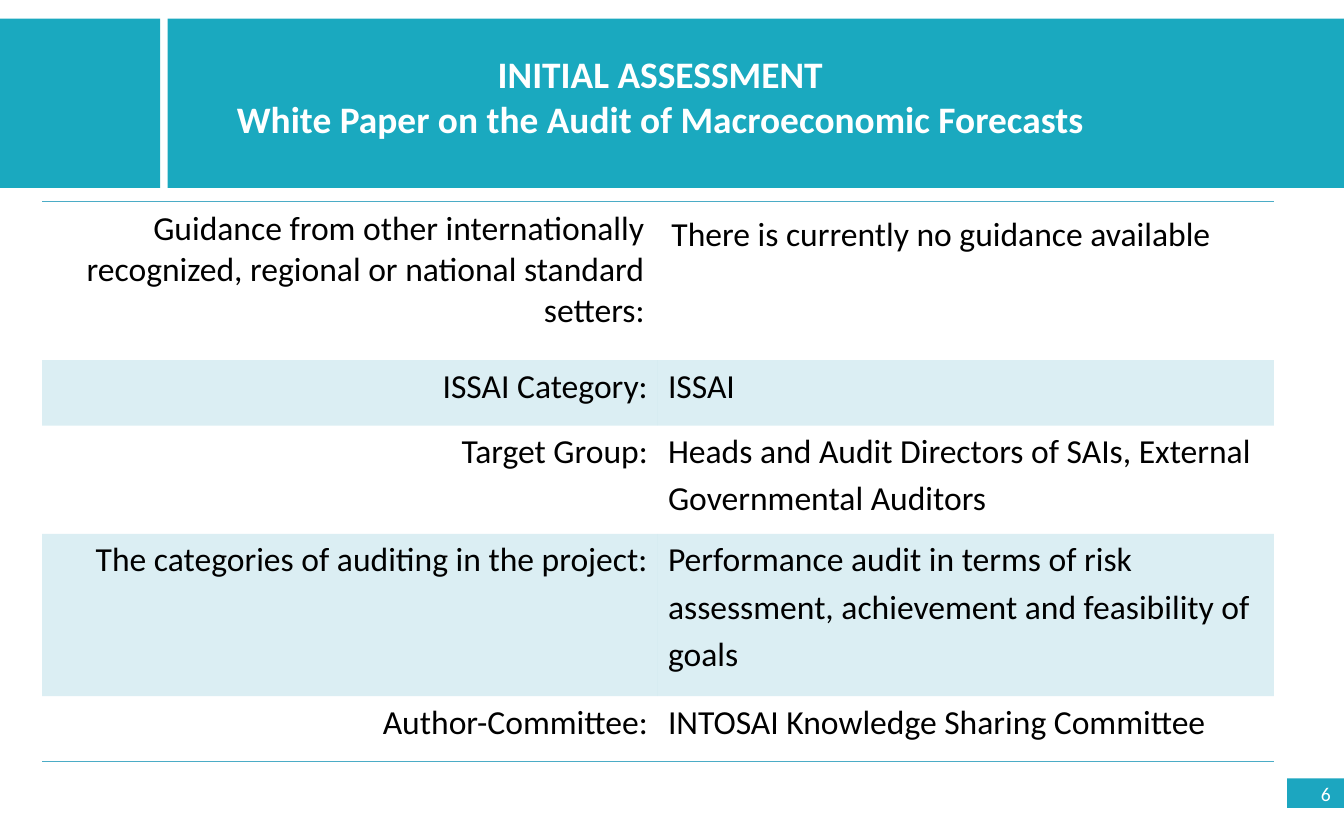
from lxml.etree import SubElement
from pptx import Presentation
from pptx.dml.color import RGBColor
from pptx.enum.shapes import MSO_SHAPE as Shape
from pptx.enum.text import MSO_ANCHOR as Anchor, MSO_AUTO_SIZE as AutoSize, PP_ALIGN as Align
from pptx.oxml.ns import qn
from pptx.util import Pt

TEAL = RGBColor(0x1A, 0xA9, 0xBF)
BADGE_TEAL = RGBColor(0x1C, 0xA6, 0xC0)
ACCENT = RGBColor(0x4B, 0xAC, 0xC6)
WHITE = RGBColor(0xFF, 0xFF, 0xFF)
BLACK = RGBColor(0, 0, 0)
FONT = "Calibri"
PLAIN_STYLE = "{2D5ABB26-0587-4C30-8999-92F81FD0307C}"

TITLE = ["INITIAL ASSESSMENT", "White Paper on the Audit of Macroeconomic Forecasts"]
PAGE_NUMBER = "6"
# (label, answer, row height)
ROWS = [
    ("Guidance from other internationally recognized, regional or national standard setters:",
     "There is currently no guidance available", 85),
    ("ISSAI Category:", "ISSAI", 35),
    ("Target Group:", "Heads and Audit Directors of SAIs, External Governmental Auditors", 58),
    ("The categories of auditing in the project:",
     "Performance audit in terms of risk assessment, achievement and feasibility of goals", 87),
    ("Author-Committee:", "INTOSAI Knowledge Sharing Committee", 35),
]
COLUMN_WIDTH = 330
BANDS = [(0, 85.9), (89.8, 630.2)]  # left, width


def write(frame, lines, size=18, color=BLACK, bold=False, align=Align.LEFT, spacing=None):
    for index, line in enumerate(lines):
        para = frame.paragraphs[0] if index == 0 else frame.add_paragraph()
        para.alignment = align
        if spacing:
            para.line_spacing = spacing
        span = para.add_run()
        span.text = line
        font = span.font
        font.name, font.size, font.bold = FONT, Pt(size), bold
        font.color.rgb = color


def add_block(page, left, top, width, height, color):
    block = page.shapes.add_shape(Shape.RECTANGLE, Pt(left), Pt(top), Pt(width), Pt(height))
    block.shadow.inherit = False
    block.fill.solid()
    block.fill.fore_color.rgb = color
    block.line.fill.background()
    return block


def add_border(cell, side):
    """Rule one side of a cell: lnT for the top, lnB for the bottom."""
    line = SubElement(cell._tc.get_or_add_tcPr(), qn("a:" + side), w=str(Pt(1)))
    fill = SubElement(line, qn("a:solidFill"))
    SubElement(fill, qn("a:srgbClr"), val=str(ACCENT))


def tint(cell):
    """Fill a cell with the accent colour at 20 % opacity."""
    cell.fill.solid()
    cell.fill.fore_color.rgb = ACCENT
    color = cell._tc.tcPr.find(qn("a:solidFill")).find(qn("a:srgbClr"))
    SubElement(color, qn("a:alpha"), val="20000")


def add_assessment_table(page):
    heights = [row[2] for row in ROWS]
    table = page.shapes.add_table(len(ROWS), 2, Pt(22.5), Pt(108),
                                  Pt(2 * COLUMN_WIDTH), Pt(sum(heights))).table
    table.first_row = table.horz_banding = False
    table._tbl.tblPr.find(qn("a:tableStyleId")).text = PLAIN_STYLE
    for column in table.columns:
        column.width = Pt(COLUMN_WIDTH)
    for r, (label, answer, height) in enumerate(ROWS):
        table.rows[r].height = Pt(height)
        for c, (text, align) in enumerate([(label, Align.RIGHT), (answer, Align.LEFT)]):
            cell = table.cell(r, c)
            if r == 0:
                add_border(cell, "lnT")
            else:
                cell.margin_left = cell.margin_right = Pt(5.4)
                cell.margin_top = cell.margin_bottom = 0
            if r == len(ROWS) - 1:
                add_border(cell, "lnB")
            if r % 2:
                tint(cell)
            else:
                cell.fill.background()
            spacing = None if r == c == 0 else 1.15
            write(cell.text_frame, [text], align=align, spacing=spacing)


def main():
    deck = Presentation()
    deck.slide_width, deck.slide_height = Pt(720), Pt(450)
    page = deck.slides.add_slide(deck.slide_layouts[5])

    for left, width in BANDS:
        add_block(page, left, 10, width, 90.7, TEAL)
    badge = add_block(page, 689.6, 417, 30.4, 15.8, BADGE_TEAL)
    badge.text_frame.vertical_anchor = Anchor.MIDDLE
    write(badge.text_frame, [PAGE_NUMBER], size=10.5, color=WHITE, align=Align.RIGHT)

    title = page.shapes.title
    page.shapes._spTree.append(title._element)  # in front of the bands
    title.left, title.top, title.width, title.height = Pt(105.8), Pt(23.8), Pt(496), Pt(55.7)
    frame = title.text_frame
    frame.word_wrap = True
    frame.auto_size = AutoSize.SHAPE_TO_FIT_TEXT
    frame.vertical_anchor = Anchor.TOP
    write(frame, TITLE, size=20, color=WHITE, bold=True, align=Align.CENTER)

    add_assessment_table(page)
    deck.save("out.pptx")


if __name__ == "__main__":
    main()
